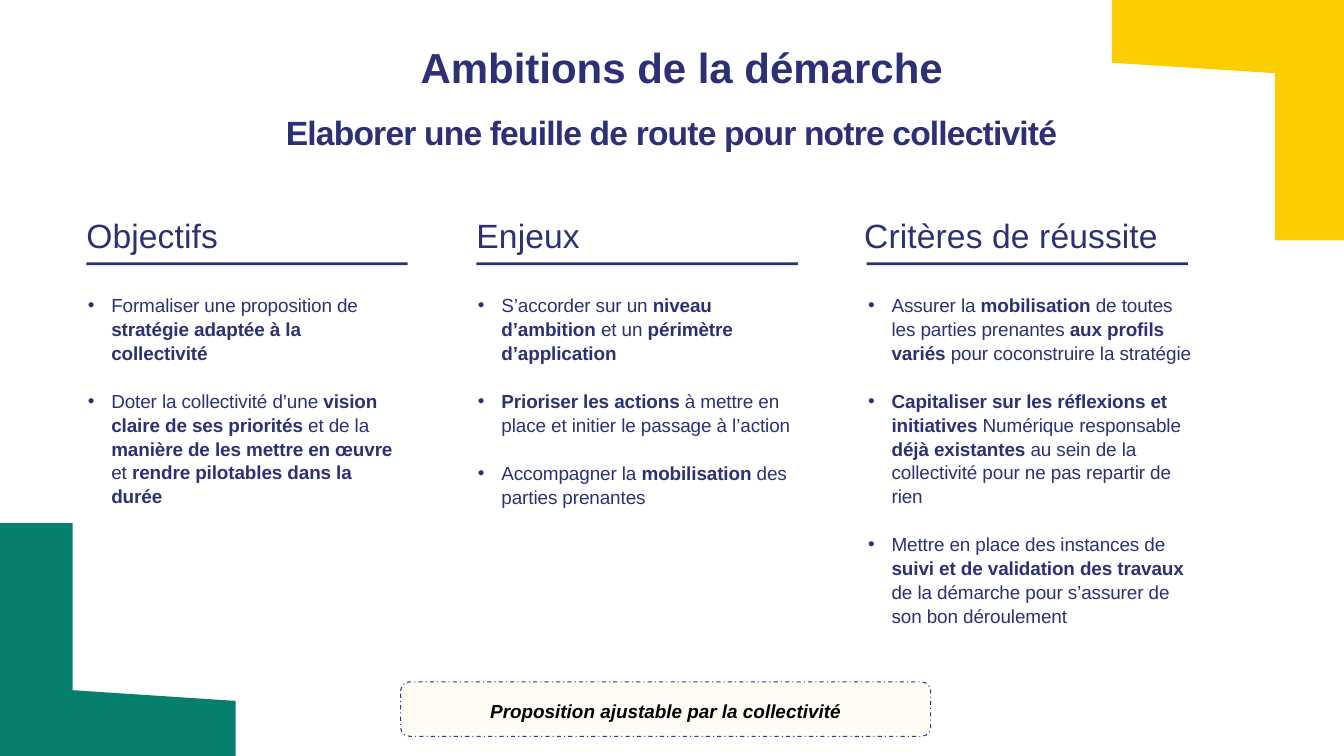
from pptx import Presentation
from pptx.dml.color import RGBColor
from pptx.enum.dml import MSO_LINE
from pptx.enum.shapes import MSO_SHAPE
from pptx.enum.text import MSO_ANCHOR, MSO_AUTO_SIZE, PP_ALIGN
from pptx.oxml.ns import qn
from pptx.util import Cm, Pt
from lxml.etree import SubElement

NAVY, YELLOW, GREEN = "2C3176", "FCCD00", "06806C"
CREAM, BORDER, BLACK = "FFFDF3", "274084", "000000"
FONT = "Arial"
TITLE_ONLY = 5

# Column grid, in centimetres
FIRST_LEFT, COLUMN_STEP = 2.9, 13.11
RULE_WIDTH = 10.8

# heading, heading shift, body width, body height, bullets (** marks bold)
COLUMNS = [
    ("Objectifs", 0, 10.57, 6.3, [
        "Formaliser une proposition de **stratégie adaptée à la collectivité**",
        "Doter la collectivité d’une **vision claire de ses priorités **et de la "
        "**manière de les mettre en œuvre **et **rendre pilotables dans la durée**",
    ]),
    ("Enjeux", 0, 10.57, 6.3, [
        "S’accorder sur un **niveau d’ambition **et un **périmètre d’application**",
        "**Prioriser les actions **à mettre en place et initier le passage à l’action",
        "Accompagner la **mobilisation** des parties prenantes",
    ]),
    ("Critères de réussite", -0.08, 11.02, 10.2, [
        "Assurer la **mobilisation **de toutes les parties prenantes "
        "**aux profils variés **pour coconstruire la stratégie",
        "**Capitaliser sur les réflexions et initiatives **Numérique responsable "
        "**déjà existantes **au sein de la collectivité pour ne pas repartir de rien",
        "Mettre en place des instances de **suivi et de validation des travaux** "
        "de la démarche pour s’assurer de son bon déroulement",
    ]),
]


def color(hex_value):
    return RGBColor.from_string(hex_value)


def paint(shape, fill):
    shape.shadow.inherit = False
    shape.fill.solid()
    shape.fill.fore_color.rgb = color(fill)
    shape.line.fill.background()


def format_run(run, size, fill=NAVY, bold=False, italic=False, spacing=0):
    font = run.font
    font.name, font.size = FONT, Pt(size)
    font.bold, font.italic = bold, italic
    font.color.rgb = color(fill)
    if spacing:
        run._r.get_or_add_rPr().set("spc", str(round(spacing * 100)))


def prepare_frame(text_frame, top_inset=0.05):
    text_frame.word_wrap = True
    text_frame.auto_size = MSO_AUTO_SIZE.NONE
    text_frame.vertical_anchor = MSO_ANCHOR.TOP
    text_frame.margin_left = text_frame.margin_right = text_frame.margin_bottom = 0
    text_frame.margin_top = Cm(top_inset)


def fill_line(shape, text, size, align=PP_ALIGN.LEFT, **style):
    """Write one line of text in a text box or placeholder."""
    prepare_frame(shape.text_frame)
    shape.text_frame.text = text
    paragraph = shape.text_frame.paragraphs[0]
    paragraph.alignment = align
    format_run(paragraph.runs[0], size, **style)


def add_text_box(slide, left, top, width, height):
    return slide.shapes.add_textbox(Cm(left), Cm(top), Cm(width), Cm(height))


def add_corner(slide, points, fill):
    """Draw a decorative corner from points in centimetres."""
    points = [(Cm(x), Cm(y)) for x, y in points]
    builder = slide.shapes.build_freeform(*points[0], scale=1.0)
    builder.add_line_segments(points[1:], close=True)
    paint(builder.convert_to_shape(), fill)


def add_bullets(slide, left, top, width, height, items):
    text_frame = add_text_box(slide, left, top, width, height).text_frame
    prepare_frame(text_frame, 0.06)
    for index, item in enumerate(items):
        paragraph = text_frame.add_paragraph() if index else text_frame.paragraphs[0]
        properties = paragraph._p.get_or_add_pPr()
        properties.set("marL", str(Cm(0.84)))
        properties.set("indent", str(Cm(-0.79)))
        SubElement(properties, qn("a:buFont")).set("typeface", FONT)
        SubElement(properties, qn("a:buChar")).set("char", "•")
        paragraph.line_spacing = 1.05
        if index:
            paragraph.space_before = Pt(23)
        for part, text in enumerate(item.split("**")):
            if text:
                run = paragraph.add_run()
                run.text = text
                format_run(run, 18, bold=part % 2 == 1, spacing=-0.1)


def add_column(slide, index, heading, shift, width, height, items):
    left = FIRST_LEFT + index * COLUMN_STEP
    box = add_text_box(slide, left + shift, 7.18, 13.97, 1.4)
    fill_line(box, heading, 32, spacing=0.1)
    rule = slide.shapes.add_shape(
        MSO_SHAPE.RECTANGLE, Cm(left), Cm(8.82), Cm(RULE_WIDTH), Cm(0.09))
    paint(rule, NAVY)
    add_bullets(slide, left, 9.78, width, height, items)


def add_note(slide, text):
    note = slide.shapes.add_shape(
        MSO_SHAPE.ROUNDED_RECTANGLE, Cm(13.46), Cm(22.91), Cm(17.81), Cm(1.83))
    paint(note, CREAM)
    note.line.color.rgb = color(BORDER)
    note.line.width = Pt(1)
    note.line.dash_style = MSO_LINE.DASH_DOT
    fill_line(note, text, 18, PP_ALIGN.CENTER, fill=BLACK, bold=True, italic=True)
    note.text_frame.vertical_anchor = MSO_ANCHOR.MIDDLE
    note.text_frame.margin_top = Cm(0.1)


def main():
    presentation = Presentation()
    presentation.slide_width, presentation.slide_height = Cm(45.16), Cm(25.4)
    slide = presentation.slides.add_slide(presentation.slide_layouts[TITLE_ONLY])

    # Decorative corners
    add_corner(slide, [(45.16, 0), (37.36, 0), (37.36, 2.11), (42.85, 2.46),
                       (42.85, 8.08), (45.16, 8.08)], YELLOW)
    add_corner(slide, [(2.44, 17.58), (0, 17.58), (0, 25.4), (7.92, 25.4),
                       (7.92, 23.55), (2.44, 23.19)], GREEN)

    # Headline and title
    headline = add_text_box(slide, 5.03, 1.33, 35.76, 1.75)
    fill_line(headline, "Ambitions de la démarche", 40, PP_ALIGN.CENTER, bold=True)
    title = slide.shapes.title
    title.left, title.top, title.width, title.height = Cm(2.77), Cm(3.72), Cm(39.6), Cm(1.88)
    fill_line(title, "Elaborer une feuille de route pour notre collectivité", 32,
              PP_ALIGN.CENTER, bold=True, spacing=-0.8)

    # Three columns and the closing note
    for index, column in enumerate(COLUMNS):
        add_column(slide, index, *column)
    add_note(slide, "Proposition ajustable par la collectivité")

    presentation.save("out.pptx")


if __name__ == "__main__":
    main()
